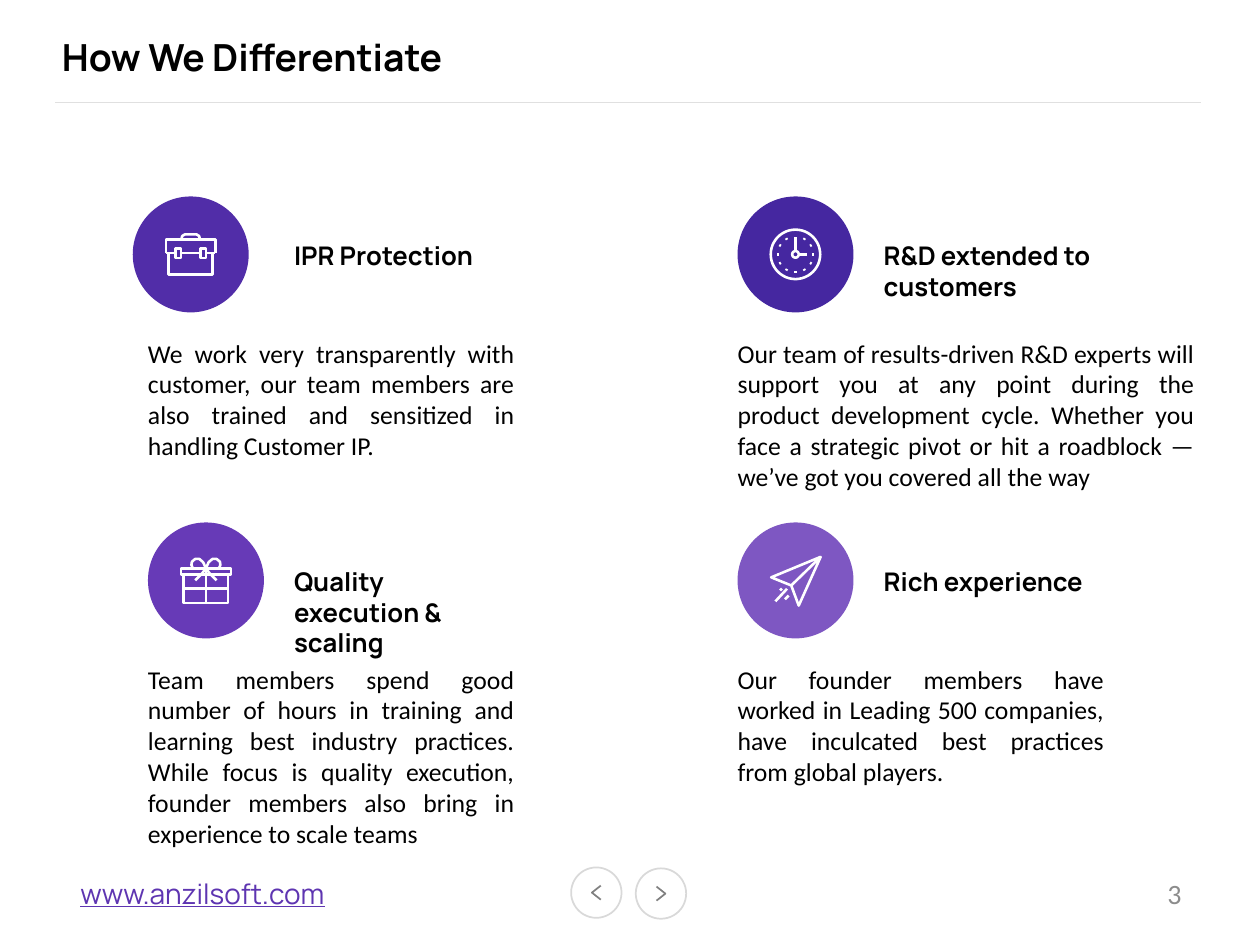
from math import cos, pi, sin

from lxml.etree import SubElement
from pptx import Presentation
from pptx.dml.color import RGBColor as RGB
from pptx.enum.shapes import MSO_CONNECTOR as LINK, MSO_SHAPE as KIND
from pptx.enum.text import MSO_ANCHOR as ANCHOR, PP_ALIGN as ALIGN
from pptx.oxml.ns import qn
from pptx.util import Pt

HEX = {
    "black": "000000", "white": "FFFFFF", "rule": "E0E0E0", "ring": "D9D9D9",
    "arrow": "808080", "page": "8C8C8C", "link": "5E35B1",
    "case": "512DA8", "clock": "4527A0", "gift": "673AB7", "plane": "7E57C2",
}
DISC = 49.7
NAV = 21.6
COLS = (63.4, 316.1)
ROWS = (84.2, 223.9)


def tint(name):
    """Return the named colour."""
    return RGB.from_string(HEX[name])


def text(slide, box, words, size, face, color="black", bold=False, line=False,
         align=ALIGN.LEFT, anchor=ANCHOR.TOP, pads=(0, 3.6, 7.2, 3.6)):
    """Add a wrapped text box with one paragraph."""
    frame = slide.shapes.add_textbox(*map(Pt, box)).text_frame
    frame.word_wrap = True
    frame.vertical_anchor = anchor
    (frame.margin_left, frame.margin_top,
     frame.margin_right, frame.margin_bottom) = map(Pt, pads)
    para = frame.paragraphs[0]
    para.text = words
    para.alignment = align
    font = para.font
    font.size, font.name, font.bold = Pt(size), face, bold
    font.underline = line
    font.color.rgb = tint(color)


def disc(slide, x, y, size, fill, edge=None):
    """Add a filled circle with an optional edge."""
    shape = slide.shapes.add_shape(KIND.OVAL, Pt(x), Pt(y), Pt(size), Pt(size))
    shape.shadow.inherit = False
    shape.fill.solid()
    shape.fill.fore_color.rgb = tint(fill)
    if edge:
        shape.line.color.rgb = tint(edge)
        shape.line.width = Pt(0.75)
    else:
        shape.line.fill.background()


def rule(slide, left, right, y):
    """Add a thin level line."""
    line = slide.shapes.add_connector(LINK.STRAIGHT, Pt(left), Pt(y), Pt(right), Pt(y))
    line.line.color.rgb = tint("rule")
    line.line.width = Pt(0.75)
    SubElement(line._element.spPr, qn("a:effectLst"))


def sketch(slide, x, y, paths, color, width):
    """Draw open strokes around a centre point as one outline."""
    build = None
    for path in paths:
        spots = [(Pt(x + dx), Pt(y + dy)) for dx, dy in path]
        if build is None:
            build = slide.shapes.build_freeform(*spots[0], scale=1.0)
        else:
            build.move_to(*spots[0])
        build.add_line_segments(spots[1:], close=False)
    shape = build.convert_to_shape()
    shape.shadow.inherit = False
    shape.fill.background()
    shape.line.color.rgb = tint(color)
    shape.line.width = Pt(width)


def frame(left, top, right, low):
    """Return the stroke of a rectangle."""
    return [(left, top), (right, top), (right, low), (left, low), (left, top)]


def polar(rad, turn):
    """Return a point at a share of a full turn."""
    return rad * cos(2 * pi * turn), rad * sin(2 * pi * turn)


def ring(rad, steps=48):
    """Return the stroke of a circle."""
    return [polar(rad, i / steps) for i in range(steps + 1)]


def both(path):
    """Return a stroke and its mirror."""
    return [path, [(-x, y) for x, y in path]]


def icons():
    """Return the strokes of each icon by name."""
    ticks = [[polar(7.2, i / 12), polar(8, i / 12)] for i in range(12) if i != 9]
    return {
        "case": [
            [(-10.6, -0.6), (-10.6, -6.5), (10.6, -6.5), (10.6, -0.6)],
            [(-9.4, -0.6), (-9.4, 8.6), (9.4, 8.6), (9.4, -0.6)],
            [(-4, -6.5), (-3.6, -7.9), (-2.5, -8.6), (2.5, -8.6), (3.6, -7.9), (4, -6.5)],
            [(-4.1, -0.6), (4.1, -0.6)],
            *both([(6.6, -0.6), (10.6, -0.6)]),
            *both(frame(4.1, -2.5, 6.6, 1.6)),
        ],
        "clock": [ring(10.6), ring(1.4), [(0, -1.4), (0, -7.6)],
                  [(1.4, 0), (4.8, 0)], *ticks],
        "gift": [
            frame(-10.7, -5.2, 10.7, -2.6),
            frame(-9.5, -2.6, 9.5, 9.7),
            [(0, -5.2), (0, 9.7)],
            [(-9.5, 3.6), (9.5, 3.6)],
            *both([(0, -5.2), (1.2, -7.8), (2.8, -9.2), (4.6, -9.2),
                   (6, -8), (6.2, -6.6), (5.6, -5.2)]),
            *both([(0, -5.2), (1.6, -3), (4.6, 0)]),
        ],
        "plane": [
            [(10.8, -10.1), (-10.4, -1.3), (-1.8, 2.2), (1.4, 10.8),
             (10.8, -10.1), (-1.8, 2.2)],
            [(-3.6, 3.6), (-8.6, 9)],
            [(-5.8, 3.5), (-6.6, 4.3)],
            [(-2.9, 6.5), (-4.5, 8.1)],
        ],
    }


def card(slide, col, row, icon, head, body, wide=164.2, shift=0):
    """Add an icon disc with a heading and a text below."""
    x, y = COLS[col], ROWS[row]
    mid = DISC / 2
    disc(slide, x + shift, y, DISC, icon)
    sketch(slide, x + shift + mid, y + mid, icons()[icon], "white", 1.1)
    text(slide, (x + 62.6, y + 15, 101.5, 20.2), head, 11, "Manrope", bold=True)
    text(slide, (x, y + 56.9, wide, 51.1), body, 11, "Calibri", align=ALIGN.JUSTIFY)


def nav(slide, x, y, way):
    """Add a round button with a chevron pointing left (-1) or right (1)."""
    disc(slide, x, y, NAV, "white", "ring")
    arrow = [(-1.9 * way, -3), (1.9 * way, 0), (-1.9 * way, 3)]
    sketch(slide, x + NAV / 2, y + NAV / 2, [arrow], "arrow", 0.75)


def main():
    """Build and save the slide."""
    deck = Presentation()
    deck.slide_width, deck.slide_height = Pt(540), Pt(405)
    slide = deck.slides.add_slide(deck.slide_layouts[6])

    text(slide, (26.6, 10.1, 360, 28.1), "How We Differentiate", 16, "Manrope",
         bold=True, anchor=ANCHOR.MIDDLE, pads=(0, 0, 0, 0))
    rule(slide, 23.8, 514.8, 43.9)

    card(slide, 0, 0, "case", "IPR Protection",
         "We work very transparently with customer, our team members are also "
         "trained and sensitized in handling Customer IP.", shift=-6.5)
    card(slide, 1, 0, "clock", "R&D extended to customers",
         "Our team of results-driven R&D experts will support you at any point "
         "during the product development cycle. Whether you face a strategic pivot "
         "or hit a roadblock — we’ve got you covered all the way", wide=203)
    card(slide, 0, 1, "gift", "Quality execution & scaling",
         "Team members spend good number of hours in training and learning best "
         "industry practices. While focus is quality execution, founder members "
         "also bring in experience to scale teams")
    card(slide, 1, 1, "plane", "Rich experience",
         "Our founder members have worked in Leading 500 companies, have inculcated "
         "best practices from global players.")

    pads = (7.2, 3.6, 7.2, 3.6)
    text(slide, (27.4, 372.2, 126, 21.6), "www.anzilsoft.com", 12, "Manrope", "link",
         line=True, anchor=ANCHOR.MIDDLE, pads=pads)
    nav(slide, 244.8, 371.8, -1)
    nav(slide, 272.5, 372.2, 1)
    text(slide, (387.4, 372.2, 126, 21.6), "3", 12, "Calibri", "page",
         align=ALIGN.RIGHT, anchor=ANCHOR.MIDDLE, pads=pads)
    deck.save("out.pptx")


if __name__ == "__main__":
    main()
